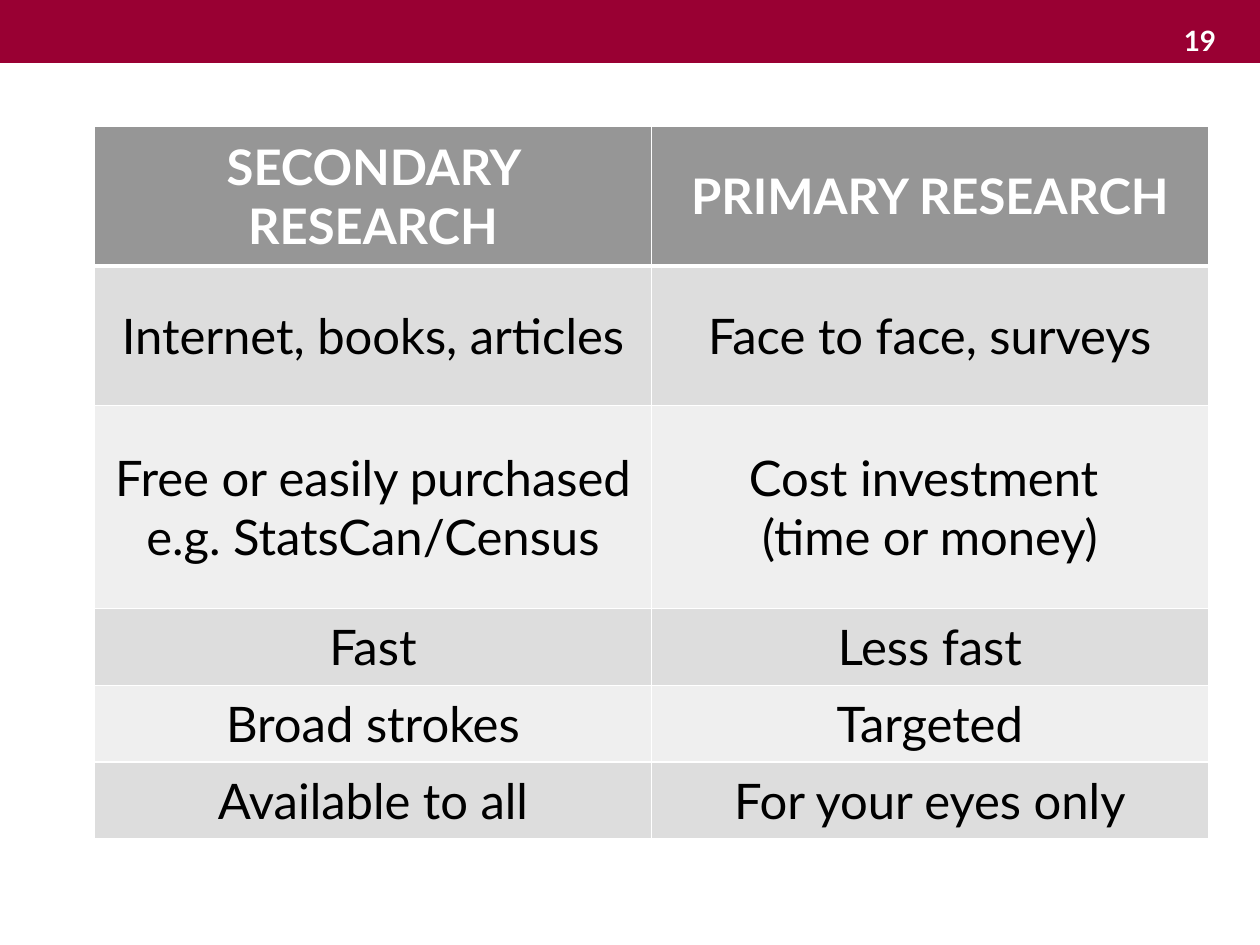
from dataclasses import dataclass

from lxml.etree import SubElement
from pptx import Presentation
from pptx.dml.color import RGBColor as Color
from pptx.enum.shapes import MSO_SHAPE as Shape
from pptx.enum.text import MSO_ANCHOR as Anchor, PP_ALIGN as Align
from pptx.oxml.ns import qn
from pptx.util import Inches, Pt

PAGE_NUMBER = "19"
ROWS = [  # height in inches, secondary research, primary research
    (1.11, "SECONDARY RESEARCH", "PRIMARY RESEARCH"),
    (1.11, "Internet, books, articles", "Face to face, surveys"),
    (1.61, "Free or easily purchased e.g. StatsCan/Census",
     "Cost investment \n(time or money)"),
    (0.61, "Fast", "Less fast"),
    (0.61, "Broad strokes", "Targeted"),
    (0.61, "Available to all", "For your eyes only"),
]
TABLE_LEFT, TABLE_TOP, COLUMN_WIDTH = 0.75, 1, 4.42


@dataclass(frozen=True)
class Theme:
    font: str = "Lato"
    banner: str = "990033"
    header: str = "969696"
    bands: tuple = ("DDDDDD", "EFEFEF")
    light: str = "FFFFFF"
    dark: str = "000000"
    table_size: int = 28
    number_size: int = 16


THEME = Theme()


def paint(target, color):
    target.fill.solid()
    target.fill.fore_color.rgb = Color.from_string(color)


def style_text(frame, size, color, bold, align):
    for para in frame.paragraphs:
        para.alignment = align
        font = para.font
        font.name, font.size, font.bold = THEME.font, Pt(size), bold
        font.color.rgb = Color.from_string(color)


def add_borders(cell, widths):
    """Draw the cell's edges; widths maps each edge tag to points."""
    properties = cell._tc.get_or_add_tcPr()
    for position, (edge, width) in enumerate(widths.items()):
        line = properties.makeelement(qn(f"a:{edge}"), {"w": str(Pt(width))})
        fill = SubElement(line, qn("a:solidFill"))
        SubElement(fill, qn("a:srgbClr"), val=THEME.light)
        properties.insert(position, line)


def add_banner(page, width):
    banner = page.shapes.add_shape(Shape.RECTANGLE, 0, 0, width, Inches(0.5))
    banner.shadow.inherit = False
    paint(banner, THEME.banner)
    banner.line.fill.background()


def add_page_number(page):
    box = page.shapes.add_textbox(Inches(7.67), 0, Inches(2.08), Inches(0.5))
    frame = box.text_frame
    frame.word_wrap = True
    frame.vertical_anchor = Anchor.BOTTOM
    frame.text = PAGE_NUMBER
    style_text(frame, THEME.number_size, THEME.light, True, Align.RIGHT)


def add_comparison(page):
    columns = len(ROWS[0]) - 1
    table = page.shapes.add_table(
        len(ROWS), columns, Inches(TABLE_LEFT), Inches(TABLE_TOP),
        Inches(columns * COLUMN_WIDTH), Inches(sum(row[0] for row in ROWS)),
    ).table
    for column in table.columns:
        column.width = Inches(COLUMN_WIDTH)
    for index, (height, *texts) in enumerate(ROWS):
        table.rows[index].height = Inches(height)
        is_header = index == 0
        fill = THEME.header if is_header else THEME.bands[(index - 1) % 2]
        color = THEME.light if is_header else THEME.dark
        widths = {"lnL": 1, "lnR": 1, "lnT": 3 if index == 1 else 1,
                  "lnB": 3 if is_header else 1}
        for number, text in enumerate(texts):
            cell = table.cell(index, number)
            cell.text = text
            cell.vertical_anchor = Anchor.MIDDLE
            paint(cell, fill)
            add_borders(cell, widths)
            style_text(cell.text_frame, THEME.table_size, color, is_header,
                       Align.CENTER)


def main():
    deck = Presentation()
    deck.slide_width, deck.slide_height = Inches(10), Inches(7.5)
    page = deck.slides.add_slide(deck.slide_layouts[6])
    add_banner(page, deck.slide_width)
    add_comparison(page)
    add_page_number(page)
    deck.save("out.pptx")


if __name__ == "__main__":
    main()
